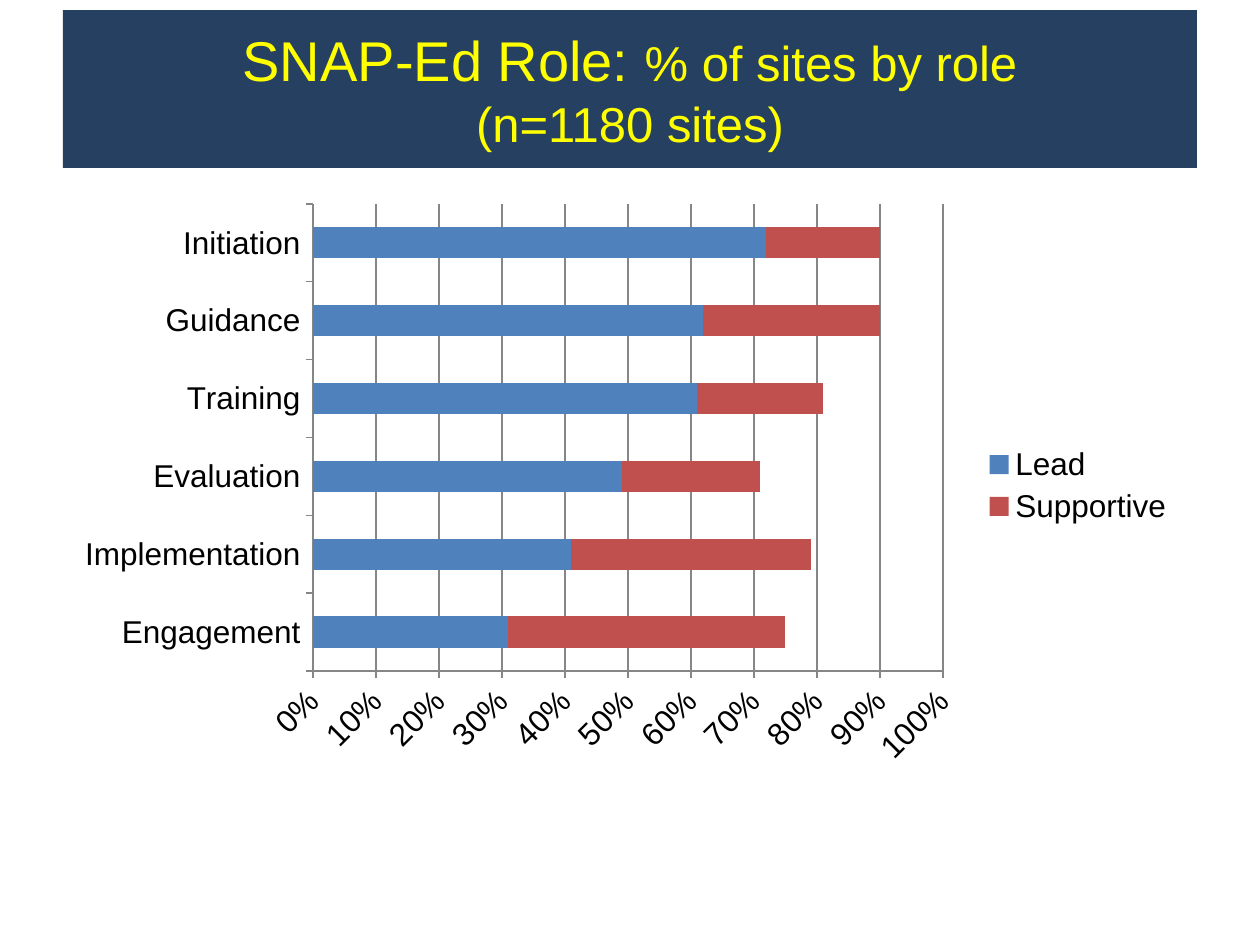
"""Build the SNAP-Ed role slide: a title banner above a stacked bar chart."""
from lxml.etree import SubElement
from pptx import Presentation
from pptx.chart.data import CategoryChartData
from pptx.dml.color import RGBColor
from pptx.enum.chart import XL_CHART_TYPE, XL_LEGEND_POSITION, XL_TICK_MARK
from pptx.enum.shapes import MSO_SHAPE
from pptx.enum.text import MSO_ANCHOR, PP_ALIGN
from pptx.oxml import parse_xml
from pptx.oxml.ns import nsdecls, qn
from pptx.util import Emu, Pt

TITLE_LINES = [
    [("SNAP-Ed Role: ", 32), ("% of sites by role", 28)],
    [("(n=1180 sites)", 28)],
]
ROLES = ["Engagement", "Implementation", "Evaluation", "Training", "Guidance", "Initiation"]
SHARES = {
    "Lead": (0.31, 0.41, 0.49, 0.61, 0.62, 0.72),
    "Supportive": (0.44, 0.38, 0.22, 0.2, 0.28, 0.18),
}
COLORS = {
    "banner": "254061",
    "title": "FFFF00",
    "text": "000000",
    "grid": "868686",
    "Lead": "4F81BD",
    "Supportive": "C0504D",
}
FONT = "Arial"
PX = 914400 // 126
SLIDE = (1260, 945)
BANNER = (63, 10, 1134, 158)
CHART = (63, 193, 1124, 585)
PLOT = (313, 204, 630, 467)


def px(*lengths):
    return [Emu(length * PX) for length in lengths]


def color(name):
    return RGBColor.from_string(COLORS[name])


def set_font(font, size, name):
    font.name = FONT
    font.size = Pt(size)
    font.color.rgb = color(name)


def add_banner(slide):
    banner = slide.shapes.add_shape(MSO_SHAPE.RECTANGLE, *px(*BANNER))
    banner.shadow.inherit = False
    banner.fill.solid()
    banner.fill.fore_color.rgb = color("banner")
    banner.line.fill.background()
    frame = banner.text_frame
    frame.word_wrap = True
    frame.vertical_anchor = MSO_ANCHOR.MIDDLE
    title = frame.paragraphs[0]
    title.alignment = PP_ALIGN.CENTER
    for index, line in enumerate(TITLE_LINES):
        if index:
            title.add_line_break()
        for text, size in line:
            run = title.add_run()
            run.text = text
            set_font(run.font, size, "title")


def place_plot(chart):
    fractions = {
        "x": (PLOT[0] - CHART[0]) / CHART[2],
        "y": (PLOT[1] - CHART[1]) / CHART[3],
        "w": PLOT[2] / CHART[2],
        "h": PLOT[3] / CHART[3],
    }
    layout = parse_xml(f"<c:layout {nsdecls('c')}/>")
    manual = SubElement(layout, qn("c:manualLayout"))
    settings = {"layoutTarget": "inner", "xMode": "edge", "yMode": "edge", **fractions}
    for tag, value in settings.items():
        SubElement(manual, qn(f"c:{tag}")).set("val", str(value))
    plot_area = chart.element.find(".//" + qn("c:plotArea"))
    for old in plot_area.findall(qn("c:layout")):
        plot_area.remove(old)
    plot_area.insert(0, layout)


def add_role_chart(slide):
    data = CategoryChartData(number_format="0%")
    data.categories = ROLES
    for name, values in SHARES.items():
        data.add_series(name, values)
    chart = slide.shapes.add_chart(XL_CHART_TYPE.BAR_STACKED, *px(*CHART), data).chart
    chart.has_title = False
    set_font(chart.font, 18, "text")
    chart.has_legend = True
    chart.legend.position = XL_LEGEND_POSITION.RIGHT
    chart.legend.include_in_layout = False
    set_font(chart.legend.font, 18, "text")

    bars = chart.plots[0]
    bars.gap_width = 150
    bars.overlap = 100
    bars.vary_by_categories = False
    for series in bars.series:
        series.format.fill.solid()
        series.format.fill.fore_color.rgb = color(series.name)

    percent_axis = chart.value_axis
    percent_axis.minimum_scale = 0
    percent_axis.maximum_scale = 1
    percent_axis.major_unit = 0.1
    percent_axis.has_major_gridlines = True
    percent_axis.tick_labels.number_format = "0%"
    percent_axis.tick_labels.number_format_is_linked = False
    for axis in (chart.category_axis, percent_axis):
        axis.major_tick_mark = XL_TICK_MARK.OUTSIDE
        set_font(axis.tick_labels.font, 18, "text")
    for line in (chart.category_axis.format.line, percent_axis.format.line,
                 percent_axis.major_gridlines.format.line):
        line.color.rgb = color("grid")
        line.width = Pt(0.75)
    label_body = chart.element.find(".//" + qn("c:valAx")).find(".//" + qn("a:bodyPr"))
    label_body.set("rot", str(-45 * 60000))
    place_plot(chart)


def main():
    deck = Presentation()
    deck.slide_width, deck.slide_height = px(*SLIDE)
    slide = deck.slides.add_slide(deck.slide_layouts[6])
    add_banner(slide)
    add_role_chart(slide)
    deck.save("out.pptx")


if __name__ == "__main__":
    main()
